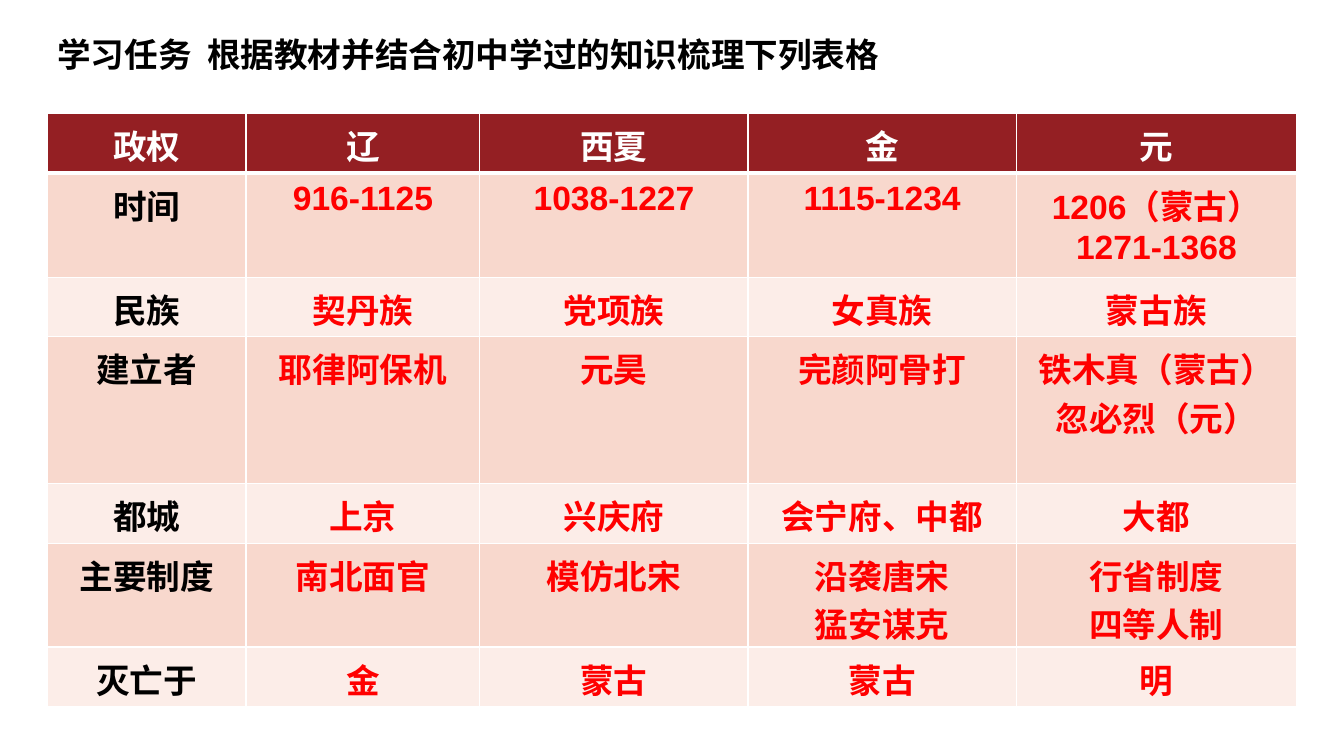
import pptx
import pptx.util
import pptx.dml.color
import pptx.enum.text
import pptx.oxml
import pptx.oxml.ns
from pptx.util import Inches

TITLE = "学习任务  根据教材并结合初中学过的知识梳理下列表格"
ROWS = [
    ("政权", "辽", "西夏", "金", "元"),
    ("时间", "916-1125", "1038-1227", "1115-1234", "1206（蒙古）\n1271-1368"),
    ("民族", "契丹族", "党项族", "女真族", "蒙古族"),
    ("建立者", "耶律阿保机", "元昊", "完颜阿骨打", "铁木真（蒙古）\n忽必烈（元）"),
    ("都城", "上京", "兴庆府", "会宁府、中都", "大都"),
    ("主要制度", "南北面官", "模仿北宋", "沿袭唐宋\n猛安谋克", "行省制度\n四等人制"),
    ("灭亡于", "金", "蒙古", "蒙古", "明"),
]
WIDTHS = (1.97, 2.32, 2.66, 2.66, 2.78)
HEIGHTS = (0.59, 1.03, 0.59, 1.46, 0.59, 1.03, 0.59)
COLORS = {
    "head": "941F23", "odd": "F8D8CD", "even": "FCEDE8",
    "white": "FFFFFF", "black": "000000", "red": "FF0000",
}
LATIN, HAN = "Arial", "Noto Sans CJK SC"


def rgb(name):
    return pptx.dml.color.RGBColor.from_string(COLORS[name])


def style(frame, face, color):
    for par in frame.paragraphs:
        for run in par.runs:
            font = run.font
            font.size = pptx.util.Pt(24)
            font.bold = True
            font.color.rgb = rgb(color)
            font.name = face
            east = pptx.oxml.parse_xml(
                f'<a:ea {pptx.oxml.ns.nsdecls("a")} typeface="{HAN}"/>')
            run._r.get_or_add_rPr().append(east)


def edge(cell, row):
    """Draw white cell borders, thicker between the header and the body."""
    props = cell._tc.get_or_add_tcPr()
    for spot, side in enumerate("LRTB"):
        thick = (row, side) in ((0, "B"), (1, "T"))
        width = pptx.util.Pt(3 if thick else 1)
        line = pptx.oxml.parse_xml(
            f'<a:ln{side} {pptx.oxml.ns.nsdecls("a")} w="{width}"><a:solidFill>'
            f'<a:srgbClr val="{COLORS["white"]}"/></a:solidFill></a:ln{side}>')
        props.insert(spot, line)


def fill_cell(cell, text, row, col):
    cell.margin_left = cell.margin_right = Inches(0.14)
    cell.margin_top = cell.margin_bottom = Inches(0.07)
    frame = cell.text_frame
    frame.text = text
    for par in frame.paragraphs:
        par.alignment = pptx.enum.text.PP_ALIGN.CENTER
    color = "white" if row == 0 else "black" if col == 0 else "red"
    style(frame, LATIN if row < 2 else HAN, color)
    cell.fill.solid()
    cell.fill.fore_color.rgb = rgb(
        "head" if row == 0 else "odd" if row % 2 else "even")
    edge(cell, row)


def main():
    deck = pptx.Presentation()
    deck.slide_width, deck.slide_height = Inches(13.33), Inches(7.5)
    slide = deck.slides.add_slide(deck.slide_layouts[6])

    title = slide.shapes.add_textbox(
        Inches(0.47), Inches(0.29), Inches(9.41), Inches(0.5)).text_frame
    title.word_wrap = True
    title.text = TITLE
    style(title, HAN, "black")

    table = slide.shapes.add_table(
        len(ROWS), len(WIDTHS), Inches(0.47), Inches(1.13),
        Inches(sum(WIDTHS)), Inches(sum(HEIGHTS))).table
    for col, width in zip(table.columns, WIDTHS):
        col.width = Inches(width)
    for row, height in zip(table.rows, HEIGHTS):
        row.height = Inches(height)
    for row, texts in enumerate(ROWS):
        for col, text in enumerate(texts):
            fill_cell(table.cell(row, col), text, row, col)

    deck.save("out.pptx")


if __name__ == "__main__":
    main()
